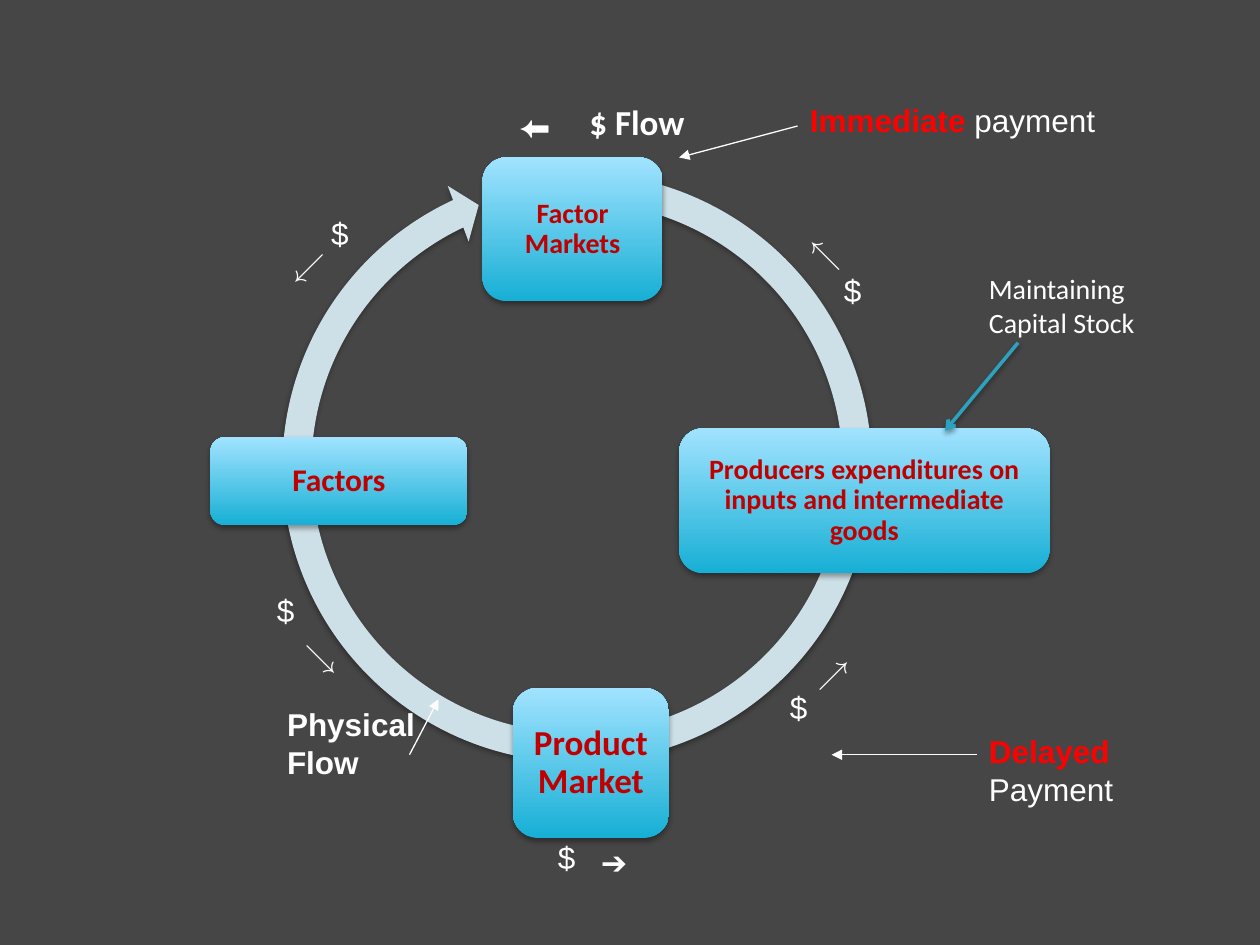
from typing import NamedTuple

from lxml.etree import SubElement
from pptx import Presentation
from pptx.dml.color import RGBColor
from pptx.enum.shapes import MSO_CONNECTOR as Connector, MSO_SHAPE as Preset
from pptx.enum.text import MSO_ANCHOR as Anchor, MSO_AUTO_SIZE as AutoSize, PP_ALIGN as Align
from pptx.oxml.ns import qn
from pptx.util import Inches, Pt

BACKDROP = RGBColor(0x46, 0x46, 0x46)
RING = RGBColor(0xCD, 0xE0, 0xE8)
STAGE_DARK = RGBColor(0x17, 0xAF, 0xD5)
STAGE_LIGHT = RGBColor(0xA1, 0xE3, 0xFF)
STAGE_TEXT = RGBColor(0xC0, 0x00, 0x00)
TEAL = RGBColor(0x2D, 0xA2, 0xBF)
WHITE = RGBColor(0xFF, 0xFF, 0xFF)
RED = RGBColor(0xFF, 0x00, 0x00)

PLAIN = {"name": "Arial", "size": Pt(18), "bold": False}
STRONG = {**PLAIN, "bold": True}
CAPITAL = {"name": "Calibri", "size": Pt(16), "bold": False}
FLOW = {"name": "Calibri", "size": Pt(20), "bold": True}


class Stage(NamedTuple):
    text: str
    left: float
    top: float
    width: float
    height: float
    size: int
    inset: float = 0.07


class Phrase(NamedTuple):
    text: str
    style: dict = PLAIN
    color: RGBColor = WHITE


class Label(NamedTuple):
    left: float
    top: float
    width: float
    height: float
    phrases: tuple


class Pointer(NamedTuple):
    start: tuple
    end: tuple
    color: RGBColor = WHITE
    width: float = 0.75
    head: str = "triangle"
    shadow_opacity: int = 0


STAGES = [
    Stage("Factor Markets", 3.83, 1.25, 1.43, 1.14, 16),
    Stage("Producers expenditures on inputs and intermediate goods",
          5.39, 3.4, 2.94, 1.15, 16),
    Stage("Product Market", 4.07, 5.46, 1.24, 1.19, 20, 0.08),
    Stage("Factors", 1.67, 3.47, 2.04, 0.7, 18),
]

SYMBOLS = [
    ("↗", 6.39, 5.14, 0.56), ("↖", 6.33, 1.81, 0.5),
    ("↙", 2.23, 1.9, 0.6), ("↘", 2.32, 5.01, 0.66),
    ("➔", 4.67, 6.64, 0.45), ("⬅", 4.02, 0.8, 0.81),
    ("$", 2.53, 1.65, 0.33), ("$", 2.1, 4.64, 0.43),
    ("$", 4.33, 6.6, 0.33), ("$", 6.17, 5.41, 0.33), ("$", 6.6, 2.1, 0.33),
]

LABELS = [
    Label(7.75, 2.11, 1.42, 0.64, (Phrase("Maintaining Capital Stock", CAPITAL),)),
    Label(4.58, 0.75, 1.27, 0.43, (Phrase("$ Flow", FLOW),)),
    Label(2.18, 5.55, 1.3, 0.7, (Phrase("Physical Flow", STRONG),)),
    Label(6.33, 0.75, 2.67, 0.4, (Phrase("Immediate ", STRONG, RED), Phrase("payment"))),
    Label(7.75, 5.76, 1.5, 0.7, (Phrase("Delayed ", STRONG, RED), Phrase("Payment"))),
] + [Label(left, top, width, 0.4, (Phrase(symbol),)) for symbol, left, top, width in SYMBOLS]

POINTERS = [
    Pointer((8.08, 2.72), (7.5, 3.42), TEAL, 2, "arrow", 38),
    Pointer((3.25, 5.99), (3.48, 5.55)),
    Pointer((6.33, 1), (5.39, 1.25)),
    Pointer((7.75, 5.99), (6.6, 5.99)),
]


def add_shadow(effects, distance: float, opacity: int) -> None:
    shadow = SubElement(effects, qn("a:outerShdw"), blurRad=str(Pt(3.1)),
                        dist=str(Pt(distance)), dir="5400000", rotWithShape="0")
    black = SubElement(shadow, qn("a:srgbClr"), val="000000")
    SubElement(black, qn("a:alpha"), val=str(opacity * 1000))


def add_run(paragraph, phrase: Phrase) -> None:
    run = paragraph.add_run()
    run.text = phrase.text
    for attribute, value in phrase.style.items():
        setattr(run.font, attribute, value)
    run.font.color.rgb = phrase.color


def add_solid(slide, preset, left: float, top: float, width: float, height: float):
    solid = slide.shapes.add_shape(
        preset, Inches(left), Inches(top), Inches(width), Inches(height))
    solid.line.fill.background()
    solid.shadow.inherit = False
    add_shadow(solid._element.spPr.find(qn("a:effectLst")), 1.8, 35)
    return solid


def draw_ring(slide) -> None:
    ring = add_solid(slide, Preset.CIRCULAR_ARROW, 2.12, 1.25, 4.92, 4.92)
    for index, value in enumerate((0.047, 2.73, 146.94, 168.82, 0.048)):
        ring.adjustments[index] = value
    ring.fill.solid()
    ring.fill.fore_color.rgb = RING


def draw_stage(slide, stage: Stage) -> None:
    box = add_solid(slide, Preset.ROUNDED_RECTANGLE,
                    stage.left, stage.top, stage.width, stage.height)
    box.fill.gradient()
    box.fill.gradient_angle = 90
    for stop, color in zip(box.fill.gradient_stops, (STAGE_DARK, STAGE_LIGHT)):
        stop.color.rgb = color
    frame = box.text_frame
    inset = Inches(stage.inset)
    layout = {"word_wrap": True, "vertical_anchor": Anchor.MIDDLE,
              "margin_left": inset, "margin_right": inset,
              "margin_top": inset, "margin_bottom": inset}
    for attribute, value in layout.items():
        setattr(frame, attribute, value)
    paragraph = frame.paragraphs[0]
    paragraph.alignment = Align.CENTER
    paragraph.line_spacing = 0.9
    style = {"name": "Calibri", "size": Pt(stage.size), "bold": True}
    add_run(paragraph, Phrase(stage.text, style, STAGE_TEXT))


def draw_label(slide, label: Label) -> None:
    box = slide.shapes.add_textbox(Inches(label.left), Inches(label.top),
                                   Inches(label.width), Inches(label.height))
    frame = box.text_frame
    frame.word_wrap = True
    frame.auto_size = AutoSize.SHAPE_TO_FIT_TEXT
    for phrase in label.phrases:
        add_run(frame.paragraphs[0], phrase)


def draw_pointer(slide, pointer: Pointer) -> None:
    ends = [Inches(value) for value in pointer.start + pointer.end]
    arrow = slide.shapes.add_connector(Connector.STRAIGHT, *ends)
    arrow.line.color.rgb = pointer.color
    arrow.line.width = Pt(pointer.width)
    SubElement(arrow.line._get_or_add_ln(), qn("a:tailEnd"), type=pointer.head)
    effects = SubElement(arrow._element.spPr, qn("a:effectLst"))
    if pointer.shadow_opacity:
        add_shadow(effects, 1.6, pointer.shadow_opacity)


def main() -> None:
    deck = Presentation()
    deck.slide_width, deck.slide_height = Inches(10), Inches(7.5)
    slide = deck.slides.add_slide(deck.slide_layouts[6])
    slide.background.fill.solid()
    slide.background.fill.fore_color.rgb = BACKDROP
    draw_ring(slide)
    for stage in STAGES:
        draw_stage(slide, stage)
    for label in LABELS:
        draw_label(slide, label)
    for pointer in POINTERS:
        draw_pointer(slide, pointer)
    deck.save("out.pptx")


if __name__ == "__main__":
    main()
